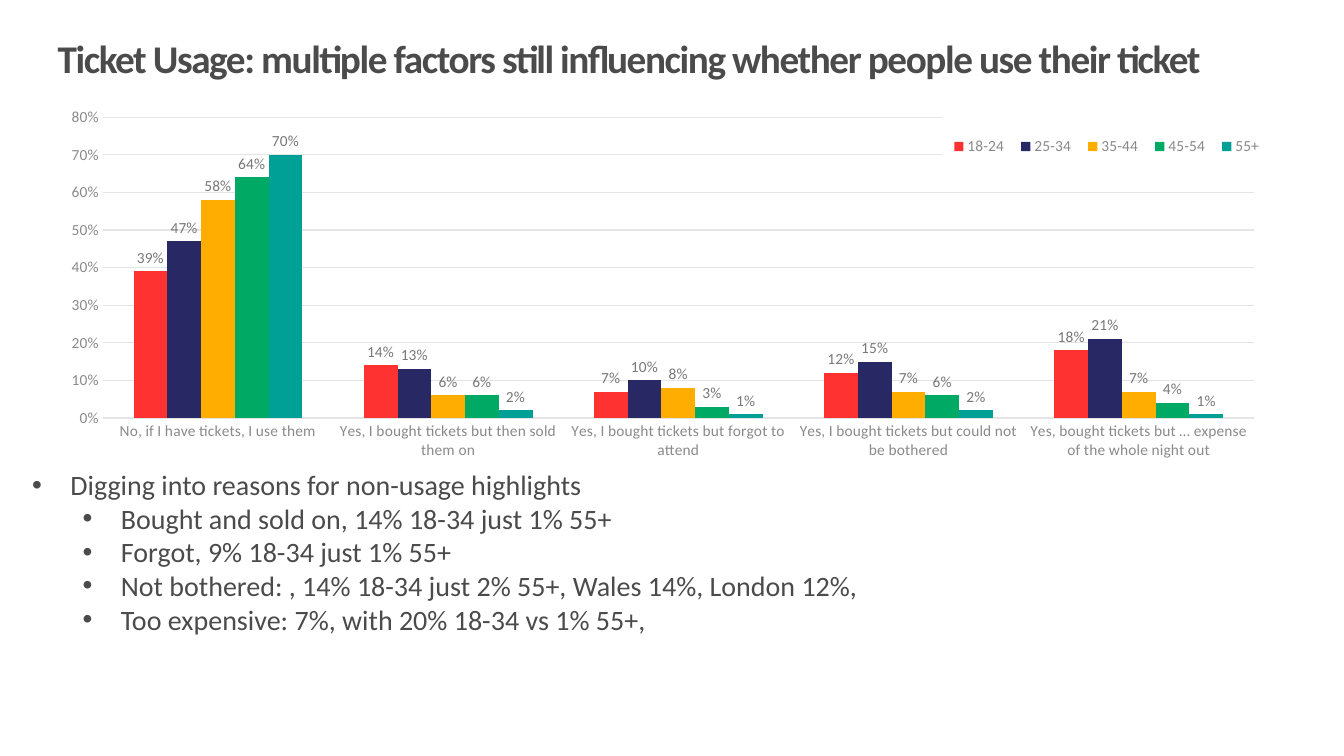
from dataclasses import dataclass

from lxml import etree
from pptx import Presentation
from pptx import util as u
from pptx.chart.data import CategoryChartData
from pptx.dml.color import RGBColor
from pptx.enum import chart as charts, text
from pptx.oxml import parse_xml
from pptx.oxml.ns import nsdecls, qn


@dataclass(frozen=True)
class Theme:
    """Colours, font and type sizes of the deck."""
    font: str = "Calibri"
    ink: str = "4B4B4B"
    axis: str = "8A8A8A"
    label: str = "787878"
    rule: str = "E4E4E4"
    paper: str = "FFFFFF"
    ages: tuple = ("FF3232", "282864", "FFAE00", "00AA64", "00A096")
    title_size: int = 28
    body_size: int = 20
    chart_size: int = 11
    rule_width: float = 0.75


class SlideBuilder:
    """Places styled elements on one slide, in shares of its size."""

    def __init__(self, deck, theme):
        """Add a title-only slide to the deck."""
        self.deck, self.theme = deck, theme
        self.slide = deck.slides.add_slide(deck.slide_layouts[5])

    def area(self, left, top, width, height):
        """Turn percentages of the slide into lengths."""
        across, down = self.deck.slide_width / 100, self.deck.slide_height / 100
        return [u.Emu(round(n)) for n in
                (left * across, top * down, width * across, height * down)]

    def style(self, font, size, color, bold=None):
        """Set the theme font at a size and colour."""
        font.name, font.size, font.bold = self.theme.font, u.Pt(size), bold
        font.color.rgb = RGBColor.from_string(color)

    def rule(self, line):
        """Draw a thin grey chart line."""
        line.color.rgb = RGBColor.from_string(self.theme.rule)
        line.width = u.Pt(self.theme.rule_width)

    def title(self, wording, area):
        """Move and format the title placeholder."""
        box = self.slide.shapes.title
        box.left, box.top, box.width, box.height = self.area(*area)
        frame = box.text_frame
        frame.word_wrap = True
        frame.vertical_anchor = text.MSO_ANCHOR.TOP
        frame.auto_size = text.MSO_AUTO_SIZE.SHAPE_TO_FIT_TEXT
        para = frame.paragraphs[0]
        para.alignment = text.PP_ALIGN.LEFT
        span = para.add_run()
        span.text = wording
        span.font._element.set("spc", "-100")
        self.style(para.font, self.theme.title_size, self.theme.ink, True)
        self.style(span.font, self.theme.title_size, self.theme.ink, True)

    def bullets(self, items, area):
        """Add a list of (level, wording) bullets."""
        frame = self.slide.shapes.add_textbox(*self.area(*area)).text_frame
        frame.word_wrap = True
        frame.auto_size = text.MSO_AUTO_SIZE.SHAPE_TO_FIT_TEXT
        for index, (level, wording) in enumerate(items):
            para = frame.add_paragraph() if index else frame.paragraphs[0]
            para.text, para.level = wording, level
            props = para._p.get_or_add_pPr()
            props.set("marL", str(u.Inches(0.38 + 0.5 * level)))
            props.set("indent", str(u.Inches(-0.38)))
            etree.SubElement(props, qn("a:buFont")).set("typeface", "Arial")
            etree.SubElement(props, qn("a:buChar")).set("char", "•")
            self.style(para.font, self.theme.body_size, self.theme.ink)

    def columns(self, categories, series, area, plot_area, legend_area):
        """Add a clustered column chart of percentages."""
        theme = self.theme
        data = CategoryChartData(number_format="0%")
        data.categories = categories
        for name, percents in series.items():
            data.add_series(name, [percent / 100 for percent in percents])
        chart = self.slide.shapes.add_chart(
            charts.XL_CHART_TYPE.COLUMN_CLUSTERED, *self.area(*area), data).chart
        chart.has_title = False
        self.style(chart.font, theme.chart_size, theme.ink)
        plot = chart.plots[0]
        plot.gap_width, plot.overlap, plot.vary_by_categories = 182, 0, False
        for group, color in zip(plot.series, theme.ages):
            group.format.fill.solid()
            group.format.fill.fore_color.rgb = RGBColor.from_string(color)
            labels = group.data_labels
            labels.show_value = True
            labels.number_format, labels.number_format_is_linked = "0%", False
            labels.position = charts.XL_LABEL_POSITION.OUTSIDE_END
            self.style(labels.font, theme.chart_size, theme.label)
        for axis in (chart.category_axis, chart.value_axis):
            axis.major_tick_mark = axis.minor_tick_mark = charts.XL_TICK_MARK.NONE
            self.style(axis.tick_labels.font, theme.chart_size, theme.axis)
        self.rule(chart.category_axis.format.line)
        values = chart.value_axis
        values.minimum_scale, values.maximum_scale, values.major_unit = 0, 0.8, 0.1
        values.tick_labels.number_format = "0%"
        values.tick_labels.number_format_is_linked = False
        values.format.line.fill.background()
        self.rule(values.major_gridlines.format.line)
        self.legend(chart, legend_area)
        plot_xml = chart._chartSpace.chart.plotArea
        for old in plot_xml.findall(qn("c:layout")):
            plot_xml.remove(old)
        plot_xml.insert(0, self.layout(plot_area, "inner"))

    def legend(self, chart, area):
        """Lay a filled legend over the top right of the chart."""
        chart.has_legend = True
        legend = chart.legend
        legend.position = charts.XL_LEGEND_POSITION.CORNER
        legend.include_in_layout = True
        self.style(legend.font, self.theme.chart_size, self.theme.axis)
        legend_xml = legend._element
        for old in legend_xml.findall(qn("c:layout")):
            legend_xml.remove(old)
        legend_xml.find(qn("c:legendPos")).addnext(self.layout(area))
        legend_xml.find(qn("c:overlay")).addnext(parse_xml(
            f'<c:spPr {nsdecls("c", "a")}><a:solidFill>'
            f'<a:srgbClr val="{self.theme.paper}"/></a:solidFill></c:spPr>'))

    def layout(self, area, target=None):
        """Build a manual chart layout from shares of the chart."""
        layout = etree.Element(qn("c:layout"))
        manual = etree.SubElement(layout, qn("c:manualLayout"))
        settings = [("layoutTarget", target)] if target else []
        settings += [("xMode", "edge"), ("yMode", "edge")]
        settings += zip("xywh", area)
        for tag, value in settings:
            etree.SubElement(manual, qn(f"c:{tag}")).set("val", str(value))
        return layout


def main():
    """Build and save the ticket usage slide."""
    deck = Presentation()
    deck.slide_width, deck.slide_height = u.Inches(13.33), u.Inches(7.5)
    page = SlideBuilder(deck, Theme())
    page.title("Ticket Usage: multiple factors still influencing whether "
               "people use their ticket", (3.53, 3.87, 86.95, 7.6))
    page.bullets([
        (0, "Digging into reasons for non-usage highlights"),
        (1, "Bought and sold on, 14% 18-34 just 1% 55+"),
        (1, "Forgot, 9% 18-34 just 1% 55+"),
        (1, "Not bothered: , 14% 18-34 just 2% 55+, Wales 14%, London 12%,"),
        (1, "Too expensive: 7%, with 20% 18-34 vs 1% 55+,"),
    ], (1.65, 61.2, 96.77, 23.73))
    page.columns(
        ["No, if I have tickets, I use them",
         "Yes, I bought tickets but then sold them on",
         "Yes, I bought tickets but forgot to attend",
         "Yes, I bought tickets but could not be bothered",
         "Yes, bought tickets but … expense of the whole night out"],
        {"18-24": (39, 14, 7, 12, 18),
         "25-34": (47, 13, 10, 15, 21),
         "35-44": (58, 6, 8, 7, 7),
         "45-54": (64, 6, 3, 6, 4),
         "55+": (70, 2, 1, 2, 1)},
        area=(3.53, 13.33, 91.6, 48.53),
        plot_area=(0.045, 0.045, 0.935, 0.82),
        legend_area=(0.727, 0.03, 0.267, 0.19))
    deck.save("out.pptx")


if __name__ == "__main__":
    main()
